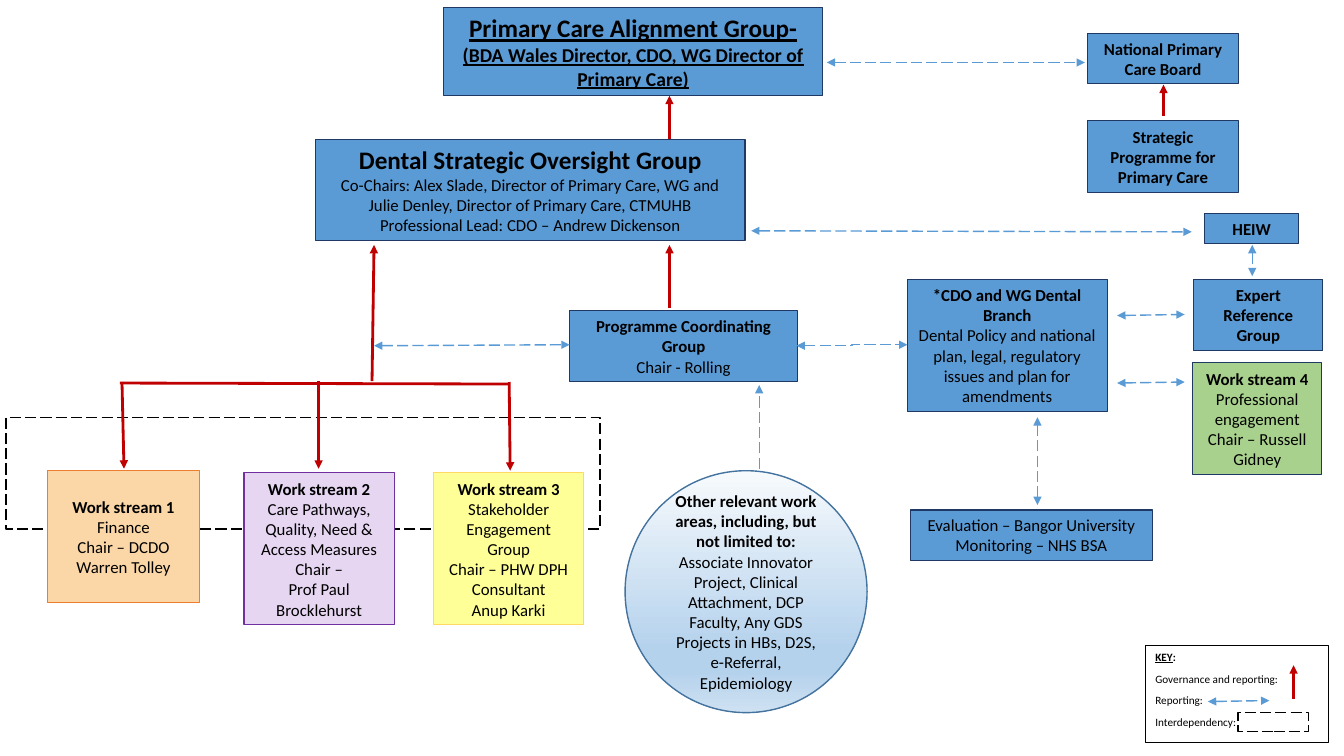
"""Build the dental programme governance slide."""
from dataclasses import dataclass
from typing import Any, Optional

from lxml.etree import SubElement
from pptx import Presentation
from pptx.dml.color import RGBColor
from pptx.enum.dml import MSO_LINE_DASH_STYLE as Dash
from pptx.enum.shapes import MSO_AUTO_SHAPE_TYPE as Preset, MSO_CONNECTOR as Connector
from pptx.enum.text import MSO_ANCHOR as Anchor, PP_ALIGN as Align
from pptx.oxml.ns import qn
from pptx.util import Inches, Pt

FONT = "Calibri"
BLACK = RGBColor(0x00, 0x00, 0x00)
BLUE = RGBColor(0x5B, 0x9B, 0xD5)
NAVY = RGBColor(0x20, 0x38, 0x64)
STEEL = RGBColor(0x43, 0x73, 0x9E)
RED = RGBColor(0xC0, 0x00, 0x00)
PEACH = RGBColor(0xFB, 0xD7, 0xA7)
ORANGE = RGBColor(0xED, 0x7D, 0x31)
LILAC = RGBColor(0xE6, 0xD6, 0xF2)
PURPLE = RGBColor(0x70, 0x30, 0xA0)
YELLOW = RGBColor(0xFF, 0xFF, 0x97)
GOLD = RGBColor(0xFF, 0xD9, 0x66)
GREEN = RGBColor(0xA9, 0xD1, 0x8E)
SKY_STOPS = (
    (0, RGBColor(0xF7, 0xFA, 0xFD)),
    (74, RGBColor(0xB5, 0xD2, 0xEC)),
    (83, RGBColor(0xB5, 0xD2, 0xEC)),
    (100, RGBColor(0xCE, 0xE1, 0xF2)),
)


@dataclass(frozen=True)
class Span:
    text: str
    size: float = 12
    bold: bool = False
    underline: bool = False


Para = tuple[Span, ...]


@dataclass(frozen=True)
class Box:
    left: float
    top: float
    width: float
    height: float
    paras: tuple[Para, ...] = ()
    fill: Optional[RGBColor] = BLUE
    outline: RGBColor = NAVY
    weight: float = 0.75
    dash: Optional[Dash] = None
    preset: Preset = Preset.RECTANGLE
    stops: tuple[tuple[int, RGBColor], ...] = ()
    align: Align = Align.CENTER
    anchor: Anchor = Anchor.MIDDLE
    gap: float = 0


@dataclass(frozen=True)
class LinkStyle:
    colour: RGBColor
    width: float
    dash: Optional[Dash] = None
    ends: tuple[str, ...] = ()


@dataclass(frozen=True)
class Link:
    x1: float
    y1: float
    x2: float
    y2: float
    style: LinkStyle
    kind: Connector = Connector.STRAIGHT


GOVERNANCE = LinkStyle(RED, 2, ends=("a:tailEnd",))
BRANCH = LinkStyle(RED, 2)
REPORTING = LinkStyle(BLUE, 1, Dash.LONG_DASH, ("a:headEnd", "a:tailEnd"))
REPORTING_UP = LinkStyle(BLUE, 1, Dash.LONG_DASH, ("a:tailEnd",))


def entry(heading: str, *lines: str, size: float = 12) -> tuple[Para, ...]:
    return ((Span(heading, size, True),), *((Span(line),) for line in lines))


def interdependency(left: float, top: float, width: float, height: float) -> Box:
    return Box(left, top, width, height, fill=None, outline=BLACK, weight=1, dash=Dash.LONG_DASH)


BOXES = (
    interdependency(0.06, 4.14, 5.89, 1.11),
    Box(4.4, 0.07, 3.76, 0.88, ((
        Span("Primary Care Alignment Group- ", 18, True, True),
        Span("(BDA Wales Director, CDO, WG Director of Primary Care)", 14, True, True)),)),
    Box(9.03, 5.06, 2.4, 0.5, (
        (Span("Evaluation – Bangor University"),), (Span("Monitoring – NHS BSA"),))),
    Box(3.13, 1.38, 4.26, 1.01, entry(
        "Dental Strategic Oversight Group",
        "Co-Chairs: Alex Slade, Director of Primary Care, WG and "
        "Julie Denley, Director of Primary Care, CTMUHB",
        "Professional Lead: CDO – Andrew Dickenson", size=18)),
    Box(10.79, 0.33, 1.49, 0.5, entry("National Primary Care Board")),
    Box(10.79, 1.2, 1.49, 0.71, entry("Strategic Programme for Primary Care")),
    Box(5.65, 3.08, 2.26, 0.71, entry("Programme Coordinating Group", "Chair - Rolling")),
    Box(9, 2.77, 1.98, 1.31, entry(
        "*CDO and WG Dental Branch",
        "Dental Policy and national plan, legal, regulatory issues and plan for amendments")),
    Box(11.95, 2.12, 0.93, 0.3, entry("HEIW")),
    Box(11.84, 2.77, 1.28, 0.71, entry("Expert Reference Group")),
    Box(6.2, 4.67, 2.4, 2.4, entry(
        "Other relevant work areas, including, but not limited to:",
        "Associate Innovator Project, Clinical Attachment, DCP Faculty, Any GDS "
        "Projects in HBs, D2S, e-Referral, Epidemiology"),
        outline=STEEL, weight=1, preset=Preset.OVAL, stops=SKY_STOPS),
    Box(0.47, 4.67, 1.51, 1.31, entry(
        "Work stream 1", "Finance", "Chair – DCDO Warren Tolley"), PEACH, ORANGE),
    Box(2.42, 4.69, 1.49, 1.51, entry(
        "Work stream 2", "Care Pathways, Quality, Need & Access Measures",
        "Chair –", "Prof Paul Brocklehurst"), LILAC, PURPLE),
    Box(4.3, 4.69, 1.49, 1.51, entry(
        "Work stream 3", "Stakeholder Engagement Group",
        "Chair – PHW DPH Consultant", "Anup Karki"), YELLOW, GOLD),
    Box(11.83, 3.6, 1.28, 1.11, entry(
        "Work stream 4", "Professional engagement", "Chair – Russell Gidney"), GREEN),
)
LINKS = (
    Link(1.19, 3.8, 5.05, 3.81, BRANCH),
    Link(1.21, 3.79, 1.23, 4.65, GOVERNANCE),
    Link(3.16, 3.78, 3.16, 4.65, GOVERNANCE),
    Link(5.05, 3.79, 5.06, 4.67, GOVERNANCE),
    Link(3.69, 3.78, 3.71, 2.43, GOVERNANCE),
    Link(6.64, 3.06, 6.64, 2.43, GOVERNANCE),
    Link(6.64, 1.38, 6.64, 0.95, GOVERNANCE),
    Link(11.54, 1.15, 11.54, 0.84, GOVERNANCE),
    Link(8.2, 0.62, 10.76, 0.62, REPORTING),
    Link(7.45, 2.29, 11.82, 2.3, REPORTING),
    Link(3.71, 3.43, 5.65, 3.42, REPORTING),
    Link(7.9, 3.43, 9, 3.42, REPORTING, Connector.ELBOW),
    Link(11.08, 3.13, 11.75, 3.12, REPORTING),
    Link(11.08, 3.8, 11.75, 3.79, REPORTING),
    Link(12.42, 2.43, 12.42, 2.74, REPORTING),
    Link(10.29, 5.01, 10.29, 4.14, REPORTING),
    Link(7.53, 4.65, 7.53, 3.82, REPORTING_UP),
)
KEY_BOXES = (
    Box(11.36, 6.4, 1.82, 0.97, (
        (Span("KEY", 8, True, True), Span(":", 8, True)),
        *((Span(label, 8),) for label in (
            "Governance and reporting:", "Reporting:", "Interdependency:"))),
        fill=None, outline=BLACK, align=Align.LEFT, anchor=Anchor.TOP, gap=6),
    interdependency(12.28, 7.07, 0.7, 0.19),
)
KEY_LINKS = (
    Link(12.83, 6.93, 12.83, 6.6, GOVERNANCE),
    Link(11.98, 6.96, 12.59, 6.95, REPORTING),
)


def assign(target: Any, values: dict[str, Any]) -> None:
    for name, value in values.items():
        setattr(target, name, value)


def write_text(frame: Any, box: Box) -> None:
    assign(frame, {"word_wrap": True, "vertical_anchor": box.anchor})
    for index, spans in enumerate(box.paras):
        para = frame.add_paragraph() if index else frame.paragraphs[0]
        assign(para, {"alignment": box.align, "space_before": Pt(box.gap if index else 0)})
        for span in spans:
            run = para.add_run()
            run.text = span.text
            assign(run.font, {"name": FONT, "size": Pt(span.size), "bold": span.bold,
                              "underline": span.underline})
            run.font.color.rgb = BLACK


def fill_shape(shape: Any, box: Box) -> None:
    if box.stops:
        shape.fill.gradient()
        shape.fill.gradient_angle = 270
        stop_list = shape._element.spPr.find(".//" + qn("a:gsLst"))
        stop_list.clear()
        for percent, colour in box.stops:
            stop = SubElement(stop_list, qn("a:gs"), pos=str(percent * 1000))
            SubElement(stop, qn("a:srgbClr"), val=str(colour))
    elif box.fill is None:
        shape.fill.background()
    else:
        shape.fill.solid()
        shape.fill.fore_color.rgb = box.fill


def draw_box(shapes: Any, box: Box) -> None:
    place = map(Inches, (box.left, box.top, box.width, box.height))
    shape = shapes.add_shape(box.preset, *place)
    shape.shadow.inherit = False
    fill_shape(shape, box)
    shape.line.color.rgb = box.outline
    assign(shape.line, {"width": Pt(box.weight), "dash_style": box.dash})
    write_text(shape.text_frame, box)


def draw_link(shapes: Any, link: Link) -> None:
    ends = map(Inches, (link.x1, link.y1, link.x2, link.y2))
    connector = shapes.add_connector(link.kind, *ends)
    connector.line.color.rgb = link.style.colour
    assign(connector.line, {"width": Pt(link.style.width), "dash_style": link.style.dash})
    properties = connector._element.spPr
    for end in link.style.ends:
        SubElement(properties.find(qn("a:ln")), qn(end), type="triangle")
    SubElement(properties, qn("a:effectLst"))


def draw_all(shapes: Any, boxes: tuple[Box, ...], links: tuple[Link, ...]) -> None:
    for box in boxes:
        draw_box(shapes, box)
    for link in links:
        draw_link(shapes, link)


def main() -> None:
    deck = Presentation()
    assign(deck, {"slide_width": Inches(13.33), "slide_height": Inches(7.5)})
    page = deck.slides.add_slide(deck.slide_layouts.get_by_name("Blank"))
    draw_all(page.shapes, BOXES, LINKS)
    draw_all(page.shapes.add_group_shape().shapes, KEY_BOXES, KEY_LINKS)
    deck.save("out.pptx")


if __name__ == "__main__":
    main()
